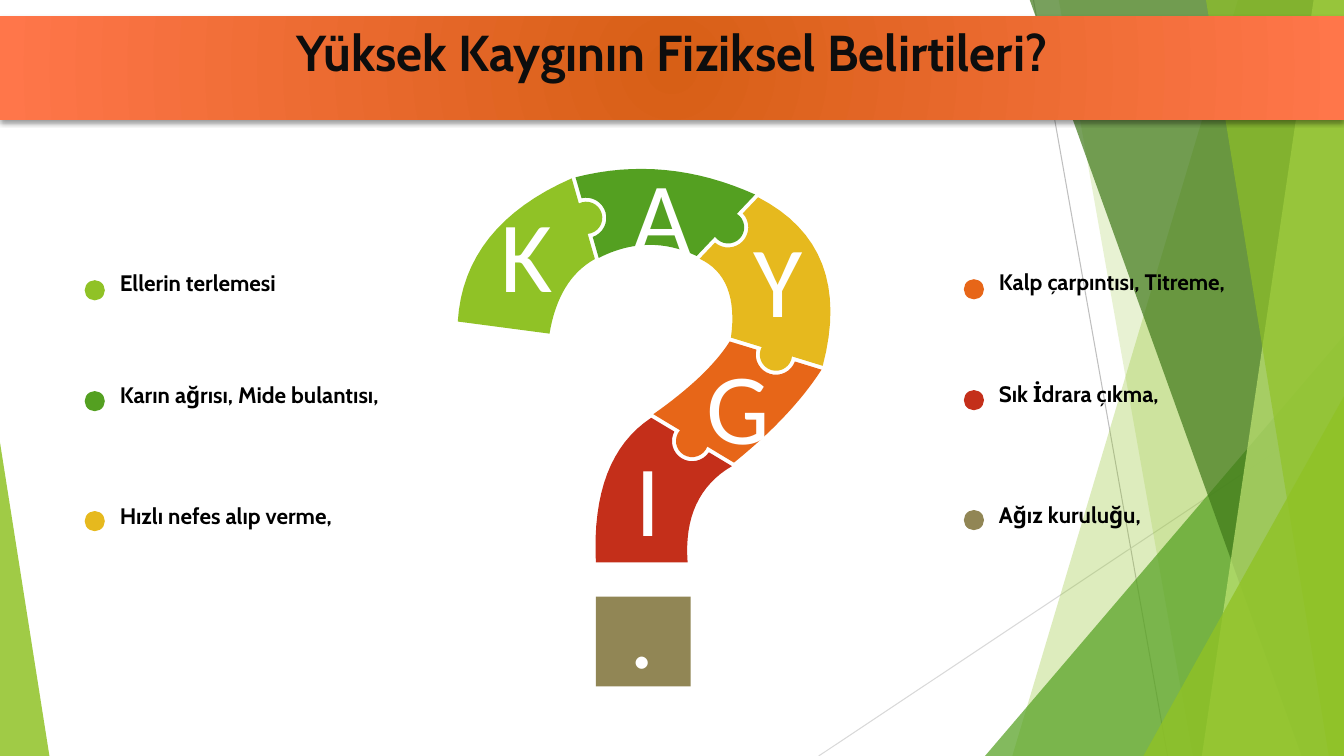
from dataclasses import dataclass
from math import acos, atan2, cos, hypot, pi, sin, sqrt
from typing import NamedTuple

from lxml.etree import SubElement
from pptx import Presentation
from pptx.dml.color import RGBColor
from pptx.enum.shapes import MSO_CONNECTOR, MSO_SHAPE
from pptx.enum.text import MSO_ANCHOR, MSO_AUTO_SIZE, PP_ALIGN
from pptx.oxml import parse_xml
from pptx.oxml.ns import nsdecls, qn
from pptx.shapes.autoshape import Shape
from pptx.shapes.shapetree import SlideShapes
from pptx.text.text import TextFrame
from pptx.util import Inches, Pt

Point = tuple[float, float]


@dataclass(frozen=True)
class Theme:
    lime: str = "90C226"
    green: str = "54A021"
    pine: str = "3F7819"
    pale: str = "C0E474"
    gold: str = "E6B91E"
    orange: str = "E76618"
    red: str = "C42F1A"
    khaki: str = "918655"
    white: str = "FFFFFF"
    black: str = "000000"
    ink: str = "0D0D0D"
    core: str = "D75F16"
    edge: str = "FF764A"
    ray: str = "BFBFBF"
    mist: str = "D9D9D9"
    bold: str = "Cabin"
    plain: str = "Calibri"
    head: int = 36
    body: int = 16
    glyph: int = 72


class Slant(NamedTuple):
    color: str
    alpha: int
    upper: float
    lower: float


class Wedge(NamedTuple):
    color: str
    alpha: int
    left: float
    top: float
    width: float
    tip: int


class Seam(NamedTuple):
    outer: Point
    inner: Point


class Piece(NamedTuple):
    color: str
    outer: Point
    inner: Point


class Letter(NamedTuple):
    text: str
    left: float
    top: float


class Item(NamedTuple):
    text: str
    color: str
    width: float
    height: float = 0.37


T = Theme()
WIDE, HIGH, TOP = 13.33, 7.5, -0.01
DOT, CELL = 0.2, 0.51
KNOB, BULGE, GAP, STEPS = 0.16, 0.03, 0.04, 16

RAYS = [((10.25, 0), (11.58, HIGH), T.ray), ((WIDE, 4.03), (8.12, HIGH), T.mist)]

DECOR: list[Slant | Wedge] = [
    Slant(T.lime, 30, 12.28, 10.04),
    Slant(T.lime, 20, 10.5, 11.83),
    Wedge(T.green, 72, 9.77, 3.33, 3.56, 1),
    Slant(T.pine, 70, 10.21, 12.91),
    Slant(T.pale, 70, 13.03, 11.92),
    Slant(T.lime, 65, 11.96, 13.18),
    Wedge(T.lime, 80, 11.34, 3.93, 1.99, 1),
    Wedge(T.lime, 85, 0, 4.39, 0.49, 0),
]

SEAMS = [
    Seam((4.54, 3.19), (5.45, 3.31)),
    Seam((5.67, 1.77), (5.9, 2.57)),
    Seam((7.49, 1.93), (6.91, 2.54)),
    Seam((8.16, 3.63), (7.25, 3.35)),
    Seam((7.28, 4.59), (6.48, 4.11)),
    Seam((6.82, 5.58), (5.91, 5.58)),
]

PIECES = [
    Piece(T.lime, (4.6, 2.24), (5.54, 2.77)),
    Piece(T.green, (6.6, 1.53), (6.43, 2.31)),
    Piece(T.gold, (8.47, 2.45), (7.33, 2.75)),
    Piece(T.orange, (7.85, 4.13), (7.02, 3.73)),
    Piece(T.red, (6.77, 4.91), (5.86, 4.54)),
]

LETTERS = [Letter("K", 4.96, 2.25), Letter("A", 6.27, 1.86), Letter("Y", 7.46, 2.49),
           Letter("G", 7.01, 3.75), Letter("I", 6.17, 4.67), Letter(".", 6.11, 5.98)]

ROWS = [2.62, 3.73, 4.93]
SIDES = {
    0.84: [Item("Ellerin terlemesi", T.lime, 1.98),
           Item("Karın ağrısı, Mide bulantısı,", T.green, 3.1),
           Item("Hızlı nefes alıp verme,", T.gold, 2.56)],
    9.56: [Item("Kalp çarpıntısı, Titreme,", T.orange, 2.63, 0.64),
           Item("Sık İdrara çıkma,", T.red, 1.96),
           Item("Ağız kuruluğu,", T.khaki, 1.74)],
}


def paint(shape: Shape, color: str, alpha: int = 100) -> None:
    shape.shadow.inherit = False
    shape.line.fill.background()
    shape.fill.solid()
    shape.fill.fore_color.rgb = RGBColor.from_string(color)
    if alpha < 100:
        tint = shape._element.spPr.find(qn("a:solidFill")).find(qn("a:srgbClr"))
        SubElement(tint, qn("a:alpha"), val=str(alpha * 1000))


def block(shapes: SlideShapes, kind: MSO_SHAPE, box: tuple[float, ...], color: str,
          alpha: int = 100) -> Shape:
    shape = shapes.add_shape(kind, *map(Inches, box))
    paint(shape, color, alpha)
    return shape


def outline(shapes: SlideShapes, points: list[Point], color: str, alpha: int = 100) -> None:
    first, *rest = [(Inches(x), Inches(y)) for x, y in points]
    pen = shapes.build_freeform(*first)
    pen.add_line_segments(rest, close=True)
    paint(pen.convert_to_shape(), color, alpha)


def curve(start: Point, bend: Point, end: Point) -> list[Point]:
    return [tuple((1 - t) ** 2 * a + 2 * t * (1 - t) * b + t * t * c
                  for a, b, c in zip(start, bend, end))
            for t in (n / STEPS for n in range(STEPS + 1))]


def joint(seam: Seam, gap: float) -> list[Point]:
    (ax, ay), (bx, by) = seam
    span = hypot(bx - ax, by - ay)
    ux, uy = (bx - ax) / span, (by - ay) / span
    mx, my = (ax + bx) / 2, (ay + by) / 2
    cx, cy = mx + BULGE * uy, my - BULGE * ux
    size, rise = KNOB + gap, BULGE - gap
    half = sqrt(size ** 2 - rise ** 2)
    first = atan2(-rise * -ux - half * uy, -rise * uy - half * ux)
    sweep = 2 * pi - 2 * acos(rise / size)
    turns = [first + sweep * n / STEPS for n in range(STEPS + 1)]
    knob = [(cx + size * cos(a), cy + size * sin(a)) for a in turns]
    dx, dy = gap * uy, -gap * ux
    return [(ax + dx, ay + dy), *knob, (bx + dx, by + dy)]


def side(place: int, gap: float) -> list[Point]:
    seam = SEAMS[place]
    return joint(seam, gap) if 0 < place < len(PIECES) else list(seam)


def write(frame: TextFrame, text: str, face: str, size: int, color: str, bold: bool,
          align: PP_ALIGN) -> None:
    line = frame.paragraphs[0]
    line.alignment = align
    run = line.add_run()
    run.text = text
    run.font.name, run.font.size, run.font.bold = face, Pt(size), bold
    run.font.color.rgb = RGBColor.from_string(color)


def label(shapes: SlideShapes, item: Item, left: float, top: float) -> None:
    box = (left, top, item.width, item.height)
    frame = shapes.add_textbox(*map(Inches, box)).text_frame
    frame.word_wrap = False
    frame.auto_size = MSO_AUTO_SIZE.SHAPE_TO_FIT_TEXT
    write(frame, item.text, T.bold, T.body, T.black, True, PP_ALIGN.LEFT)


def stamp(shapes: SlideShapes, mark: Letter) -> None:
    frame = shapes.add_textbox(*map(Inches, (mark.left, mark.top, CELL, CELL))).text_frame
    frame.word_wrap = False
    frame.vertical_anchor = MSO_ANCHOR.MIDDLE
    frame.margin_left = frame.margin_right = frame.margin_top = frame.margin_bottom = 0
    write(frame, mark.text, T.plain, T.glyph, T.white, False, PP_ALIGN.CENTER)


def banner(shapes: SlideShapes, text: str) -> None:
    bar = block(shapes, MSO_SHAPE.RECTANGLE, (0, 0.16, WIDE, 1.03), T.core)
    props = bar._element.spPr
    props.replace(props.find(qn("a:solidFill")), parse_xml(
        f'<a:gradFill {nsdecls("a")} rotWithShape="1"><a:gsLst>'
        f'<a:gs pos="0"><a:srgbClr val="{T.core}"/></a:gs>'
        f'<a:gs pos="100000"><a:srgbClr val="{T.edge}"/></a:gs></a:gsLst>'
        '<a:path path="circle"><a:fillToRect l="50000" t="50000" r="50000" b="50000"/>'
        '</a:path></a:gradFill>'))
    props.find(qn("a:effectLst")).append(parse_xml(
        f'<a:outerShdw {nsdecls("a")} blurRad="{Pt(3.5)}" dist="{Pt(1.7)}" dir="5400000" '
        f'rotWithShape="0"><a:srgbClr val="{T.black}"><a:alpha val="40000"/></a:srgbClr>'
        '</a:outerShdw>'))
    bar.text_frame.word_wrap = True
    bar.text_frame.vertical_anchor = MSO_ANCHOR.TOP
    write(bar.text_frame, text, T.bold, T.head, T.ink, True, PP_ALIGN.CENTER)


def main() -> None:
    deck = Presentation()
    deck.slide_width, deck.slide_height = Inches(WIDE), Inches(HIGH)
    shapes = deck.slides.add_slide(deck.slide_layouts[6]).shapes
    for start, end, color in RAYS:
        ray = shapes.add_connector(MSO_CONNECTOR.STRAIGHT, *map(Inches, start + end))
        ray.line.width = Pt(0.75)
        ray.line.color.rgb = RGBColor.from_string(color)
        SubElement(ray._element.spPr, qn("a:effectLst"))
    for part in DECOR:
        if isinstance(part, Slant):
            points = [(part.upper, TOP), (WIDE, TOP), (WIDE, HIGH), (part.lower, HIGH)]
            outline(shapes, points, part.color, part.alpha)
        else:
            box = (part.left, part.top, part.width, HIGH - part.top)
            wedge = block(shapes, MSO_SHAPE.ISOSCELES_TRIANGLE, box, part.color, part.alpha)
            wedge.adjustments[0] = part.tip
    for place, piece in enumerate(PIECES):
        back, front = side(place, GAP), side(place + 1, 0)
        rim = curve(back[0], piece.outer, front[0])
        bore = curve(front[-1], piece.inner, back[-1])
        outline(shapes, rim + front[1:-1] + bore + back[-2:0:-1], piece.color)
    block(shapes, MSO_SHAPE.RECTANGLE, (5.91, 5.92, 0.94, 0.89), T.khaki)
    for column, (left, items) in enumerate(SIDES.items()):
        for row, item in enumerate(items):
            top = ROWS[row] - 0.01 * column
            block(shapes, MSO_SHAPE.OVAL, (left, top + 0.16 - 0.01 * row, DOT, DOT), item.color)
            label(shapes, item, left + 0.25, top)
    for mark in LETTERS:
        stamp(shapes, mark)
    banner(shapes, "Yüksek Kaygının Fiziksel Belirtileri?")
    deck.save("out.pptx")


if __name__ == "__main__":
    main()
